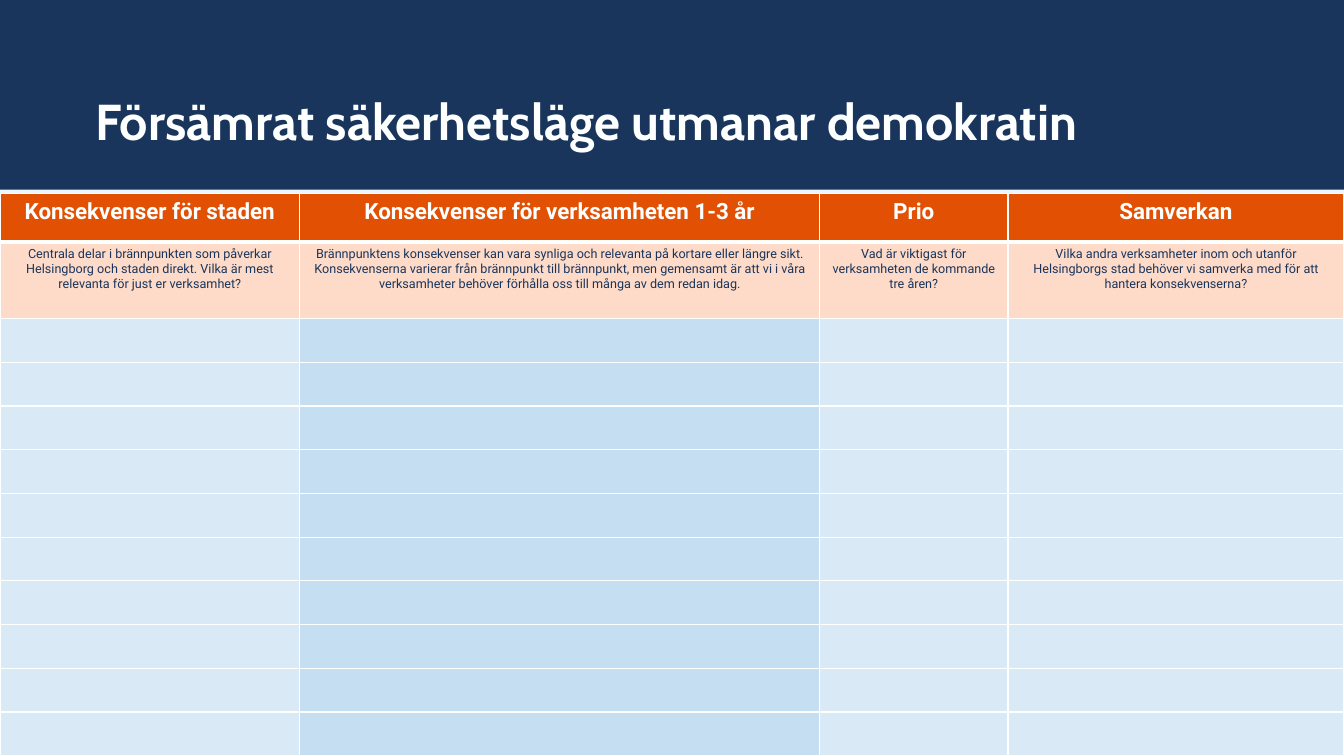
from lxml.etree import SubElement
from pptx import Presentation
from pptx.dml.color import RGBColor
from pptx.enum.shapes import MSO_SHAPE
from pptx.enum.text import MSO_ANCHOR, PP_ALIGN
from pptx.oxml import parse_xml
from pptx.oxml.ns import nsdecls, qn
from pptx.util import Pt

NAVY = RGBColor(0x1A, 0x35, 0x5C)
WHITE = RGBColor(0xFE, 0xFF, 0xFF)
ORANGE = RGBColor(0xE2, 0x51, 0x03)
PEACH = RGBColor(0xFE, 0xDB, 0xC8)
BLUE = RGBColor(0xC6, 0xDE, 0xF2)
PALE_BLUE = RGBColor(0xEE, 0xF5, 0xFB)

COLUMNS = [
    (214, "Konsekvenser för staden",
     "Centrala delar i brännpunkten som påverkar Helsingborg och staden direkt. "
     "Vilka är mest relevanta för just er verksamhet?"),
    (371.5, "Konsekvenser för verksamheten 1-3 år",
     "Brännpunktens konsekvenser kan vara synliga och relevanta på kortare eller "
     "längre sikt. Konsekvenserna varierar från brännpunkt till brännpunkt, men "
     "gemensamt är att vi i våra verksamheter behöver förhålla oss till många av "
     "dem redan idag."),
    (134.5, "Prio", "Vad är viktigast för verksamheten de kommande tre åren?"),
    (240, "Samverkan",
     "Vilka andra verksamheter inom och utanför Helsingborgs stad behöver vi "
     "samverka med för att hantera konsekvenserna?"),
]
ROW_HEIGHTS = [34.5, 54.7] + [31.25] * 10


def write(frame, text, size, color, font="Roboto", bold=False,
          align=PP_ALIGN.CENTER, spacing=1.0):
    paragraph = frame.paragraphs[0]
    paragraph.alignment = align
    paragraph.line_spacing = spacing
    run = paragraph.add_run()
    run.text = text
    run.font.name = font
    run.font.size = Pt(size)
    run.font.bold = bold
    run.font.color.rgb = color


def add_borders(cell, widths):
    properties = cell._tc.get_or_add_tcPr()
    for position, (side, width) in enumerate(zip("LRTB", widths)):
        properties.insert(position, parse_xml(
            f'<a:ln{side} {nsdecls("a")} w="{Pt(width)}"><a:solidFill>'
            f'<a:srgbClr val="{WHITE}"/></a:solidFill></a:ln{side}>'))


presentation = Presentation()
presentation.slide_width = Pt(960)
presentation.slide_height = Pt(540)
slide = presentation.slides.add_slide(presentation.slide_layouts[6])
slide.background.fill.solid()
slide.background.fill.fore_color.rgb = PALE_BLUE

# Title band
band = slide.shapes.add_shape(MSO_SHAPE.RECTANGLE, 0, 0, Pt(960), Pt(135.5))
band.shadow.inherit = False
band.fill.solid()
band.fill.fore_color.rgb = NAVY
band.line.fill.background()

# Title
title = slide.shapes.add_textbox(Pt(68), Pt(17), Pt(720), Pt(91)).text_frame
title.word_wrap = True
title.vertical_anchor = MSO_ANCHOR.BOTTOM
title.margin_left = title.margin_right = title.margin_top = title.margin_bottom = 0
write(title, "Försämrat säkerhetsläge utmanar demokratin", 36, WHITE,
      font="Cabin", bold=True, align=PP_ALIGN.LEFT, spacing=0.9)

# Consequence table
consequences = slide.shapes.add_table(
    len(ROW_HEIGHTS), len(COLUMNS), 0, Pt(138.3), Pt(960), Pt(sum(ROW_HEIGHTS))).table
for row, height in zip(consequences.rows, ROW_HEIGHTS):
    row.height = Pt(height)

for column_index, (width, heading, question) in enumerate(COLUMNS):
    consequences.columns[column_index].width = Pt(width)
    for row_index in range(len(ROW_HEIGHTS)):
        cell = consequences.cell(row_index, column_index)
        cell.fill.solid()
        if row_index == 0:
            cell.fill.fore_color.rgb = ORANGE
            write(cell.text_frame, heading, 16, WHITE, bold=True)
        elif row_index == 1:
            cell.fill.fore_color.rgb = PEACH
            write(cell.text_frame, question, 9, NAVY)
        else:
            cell.fill.fore_color.rgb = BLUE
            # Every column but the second is half transparent
            if column_index != 1:
                shade = cell._tc.tcPr.find(".//" + qn("a:srgbClr"))
                SubElement(shade, qn("a:alpha"), val="50000")
        add_borders(cell, (1, 1, 3 if row_index == 1 else 1, 3 if row_index == 0 else 1))

presentation.save("out.pptx")
